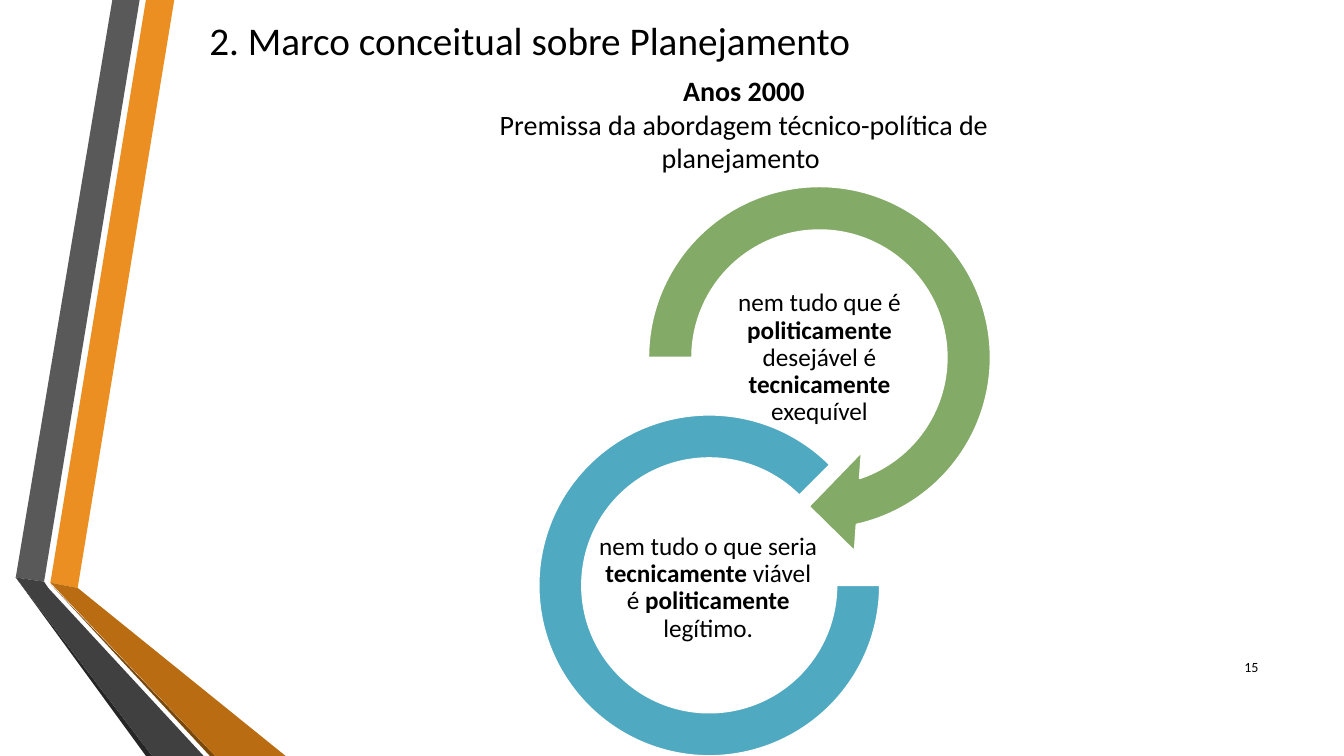
import pptx
import pptx.dml.color
import pptx.enum.shapes
import pptx.enum.text
import pptx.util

PX = 9525
WIDE, HIGH = 1280, 720
KIND = pptx.enum.shapes.MSO_SHAPE
ALIGN = pptx.enum.text.PP_ALIGN
MIDDLE = pptx.enum.text.MSO_ANCHOR.MIDDLE

COLORS = {
    "text": "000000", "white": "FFFFFF",
    "orange": "EB8F22", "brown": "B96C11", "umber": "7B480B",
    "gray": "595959", "coal": "404040", "black": "262626",
    "green": "83AA67", "blue": "4FA9C1",
}

BANDS = [
    ("orange", [(48, 555), (74, 560), (166, 0), (139, 0)]),
    ("gray", [(133, 0), (107, 0), (15, 550), (42, 554)]),
    ("black", [(15, 550), (139, 720), (145, 720)]),
    ("umber", [(48, 556), (200, 720), (205, 720)]),
    ("brown", [(48, 555), (205, 720), (272, 720), (74, 560)]),
    ("coal", [(194, 720), (46, 560), (42, 554), (15, 550), (145, 720)]),
]

RINGS = [
    (KIND.CIRCULAR_ARROW, (591, 151, 379, 379), "green",
     (0.11, 11.42, 45, 108, 0.125)),
    (KIND.BLOCK_ARC, (513, 395, 325, 325), "blue", (0, 189, 0.127)),
]

# Each paragraph is a list of runs that alternate between plain and bold.
LABELS = [
    ((675, 288, 211, 106),
     [["nem tudo que é ", "politicamente ", "desejável é ",
       "tecnicamente ", "exequível"]]),
    ((569, 507, 211, 106),
     [["nem tudo o que seria ", "tecnicamente ", "viável é ",
       "politicamente ", "legítimo."]]),
]


def scale(box):
    return [n * PX for n in box]


def assign(item, values):
    for name, value in values.items():
        setattr(item, name, value)


def tint(form, color):
    form.solid()
    form.fore_color.rgb = pptx.dml.color.RGBColor.from_string(COLORS[color])


def add_band(slide, color, points):
    start, *rest = points
    build = slide.shapes.build_freeform(*start, scale=PX)
    build.add_line_segments(rest, close=True)
    band = build.convert_to_shape()
    band.shadow.inherit = False
    tint(band.fill, color)
    band.line.fill.background()


def add_ring(slide, kind, box, color, bends):
    ring = slide.shapes.add_shape(kind, *scale(box))
    ring.shadow.inherit = False
    for spot, bend in enumerate(bends):
        ring.adjustments[spot] = bend
    tint(ring.fill, color)
    tint(ring.line.fill, "white")
    ring.line.width = pptx.util.Pt(1.25)


def add_text(slide, box, paras, size, align, inset=None, lead=1.0):
    """Write paragraphs whose runs alternate between plain and bold."""
    frame = slide.shapes.add_textbox(*scale(box)).text_frame
    assign(frame, {"word_wrap": True, "vertical_anchor": MIDDLE})
    if inset is not None:
        for side in ("left", "top", "right", "bottom"):
            setattr(frame, f"margin_{side}", inset * PX)
    for spot, words in enumerate(paras):
        para = frame.add_paragraph() if spot else frame.paragraphs[0]
        assign(para, {"alignment": align, "line_spacing": lead})
        for turn, word in enumerate(words):
            if not word:
                continue
            run = para.add_run()
            run.text = word
            assign(run.font, {"name": "Calibri", "size": pptx.util.Pt(size),
                              "bold": turn % 2 == 1})
            tint(run.font.fill, "text")


def main():
    deck = pptx.Presentation()
    assign(deck, {"slide_width": WIDE * PX, "slide_height": HIGH * PX})
    slide = deck.slides.add_slide(deck.slide_layouts[6])

    for band in BANDS:
        add_band(slide, *band)
    add_text(slide, (190, -7, 664, 90),
             [["2. Marco conceitual sobre Planejamento"]], 28, ALIGN.LEFT)
    add_text(slide, (389, 73, 639, 90),
             [["", "Anos 2000"],
              ["Premissa da abordagem técnico-política de planejamento "]],
             20, ALIGN.CENTER)
    for ring, (box, paras) in zip(RINGS, LABELS):
        add_ring(slide, *ring)
        add_text(slide, box, paras, 18, ALIGN.CENTER, inset=1, lead=0.9)
    add_text(slide, (1150, 616, 58, 38), [["15"]], 10, ALIGN.RIGHT)

    deck.save("out.pptx")


if __name__ == "__main__":
    main()
